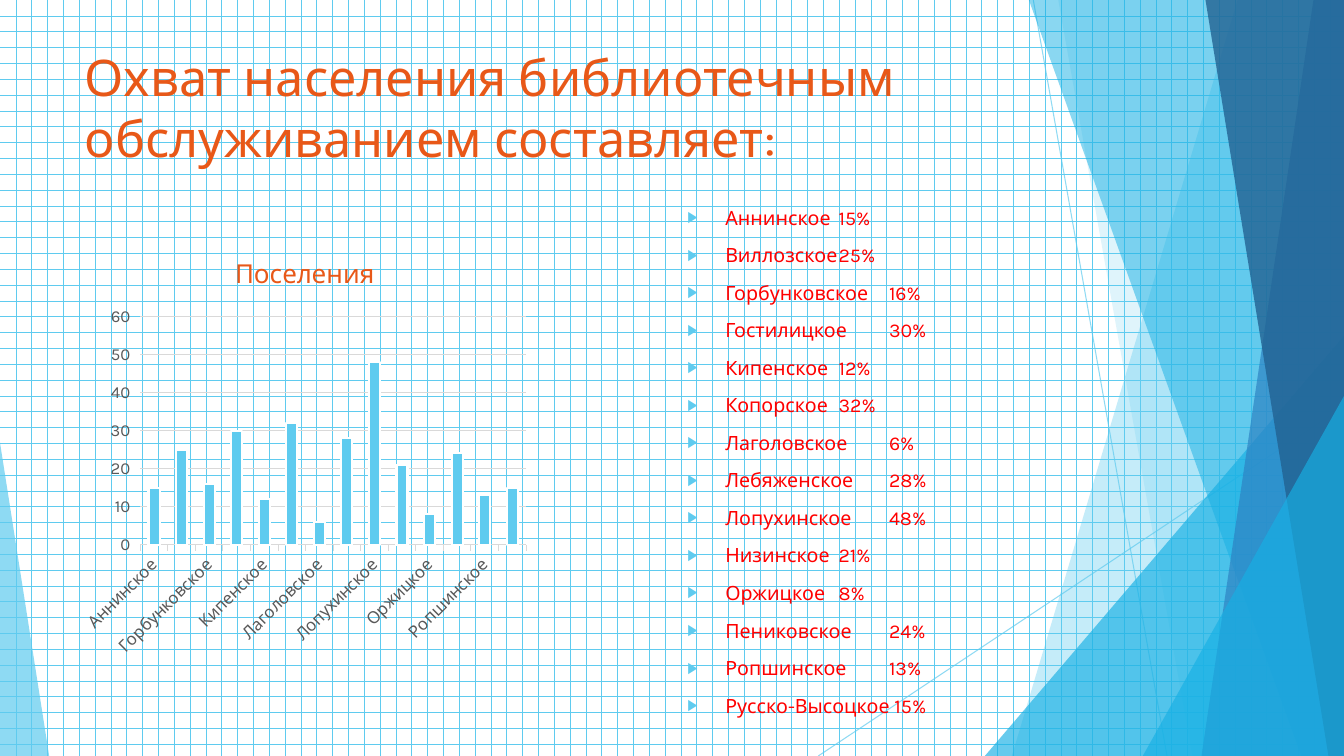
import pptx
import pptx.util
import pptx.chart.data
import pptx.dml.color
import pptx.enum.chart
import pptx.enum.dml
import pptx.enum.shapes
import pptx.enum.text
import pptx.oxml
import pptx.oxml.ns

Cm = pptx.util.Cm
Pt = pptx.util.Pt
qn = pptx.oxml.ns.qn
WIDE, HIGH = 33.87, 19.05
FACE = "Karla"
SKY, AZURE = "5FCBEF", "17B0E4"
ORANGE, RED, GREY, PALE = "E85818", "FF0000", "595959", "D9D9D9"
SHARES = {
    "Аннинское": 15, "Виллозское": 25, "Горбунковское": 16, "Гостилицкое": 30,
    "Кипенское": 12, "Копорское": 32, "Лаголовское": 6, "Лебяженское": 28,
    "Лопухинское": 48, "Низинское": 21, "Оржицкое": 8, "Пениковское": 24,
    "Ропшинское": 13, "Русско-Высоцкое": 15,
}


def tint(code):
    return pptx.dml.color.RGBColor.from_string(code)


def put(item, values):
    for name, value in values.items():
        setattr(item, name, value)


def style(font, size, code):
    put(font, {"size": Pt(size), "name": FACE, "bold": False})
    font.color.rgb = tint(code)


def stroke(line, code, width):
    line.color.rgb = tint(code)
    line.width = Pt(width)


def node(tag, **values):
    item = pptx.oxml.parse_xml(f"<{tag} {pptx.oxml.ns.nsdecls('a', 'c')}/>")
    for name, value in values.items():
        item.set(name, str(value))
    return item


def fade(shape, share):
    for color in shape.element.iter(qn("a:srgbClr")):
        color.append(node("a:alpha", val=share * 1000))


def paint(shape, code, share):
    shape.shadow.inherit = False
    shape.fill.solid()
    shape.fill.fore_color.rgb = tint(code)
    shape.line.fill.background()
    fade(shape, share)


def ray(slide, *ends):
    line = slide.shapes.add_connector(
        pptx.enum.shapes.MSO_CONNECTOR.STRAIGHT, *map(Cm, ends))
    stroke(line.line, SKY, 0.75)
    line.element.spPr.append(node("a:effectLst"))
    fade(line, 70)


def panel(slide, top, base, code, share):
    build = slide.shapes.build_freeform(Cm(top), 0)
    build.add_line_segments(
        [(Cm(x), Cm(y)) for x, y in ((WIDE, 0), (WIDE, HIGH), (base, HIGH))])
    paint(build.convert_to_shape(), code, share)


def wedge(slide, left, width, height, peak, code, share):
    shape = slide.shapes.add_shape(
        pptx.enum.shapes.MSO_SHAPE.ISOSCELES_TRIANGLE,
        Cm(left), Cm(HIGH - height), Cm(width), Cm(height))
    shape.adjustments[0] = peak
    paint(shape, code, share)


def scene(slide):
    fill = slide.background.fill
    fill.patterned()
    fill.pattern = pptx.enum.dml.MSO_PATTERN.DOTTED_GRID
    fill.fore_color.rgb = tint(SKY)
    fill.back_color.rgb = tint("FFFFFF")
    ray(slide, 26.04, 0, 29.41, HIGH)
    ray(slide, WIDE, 10.24, 20.62, HIGH)
    panel(slide, 31.19, 25.5, SKY, 36)
    panel(slide, 26.67, 30.05, SKY, 20)
    wedge(slide, 24.82, 9.05, 10.59, 1, AZURE, 66)
    panel(slide, 25.93, 32.79, AZURE, 50)
    panel(slide, 33.1, 30.28, "2E83C3", 70)
    panel(slide, 30.38, 33.48, "226292", 80)
    wedge(slide, 28.8, 5.07, 9.07, 1, AZURE, 66)
    wedge(slide, 0, 1.24, 7.9, 0, SKY, 70)


def write(slide, holder, box, lines, size, code, gap):
    slide.shapes.element.append(holder.element)
    put(holder, dict(zip(("left", "top", "width", "height"), map(Cm, box))))
    frame = holder.text_frame
    frame.text = "\n".join(lines)
    put(frame, {"word_wrap": True,
                "auto_size": pptx.enum.text.MSO_AUTO_SIZE.NONE,
                "vertical_anchor": pptx.enum.text.MSO_ANCHOR.TOP})
    for part in frame.paragraphs:
        put(part, {"alignment": pptx.enum.text.PP_ALIGN.LEFT,
                   "space_before": Pt(gap)})
        style(part.runs[0].font, size, code)
    return frame


def mark(part):
    props = part._p.get_or_add_pPr()
    put(props, {"marL": Cm(0.95), "indent": -Cm(0.95)})
    color = node("a:buClr")
    color.append(node("a:srgbClr", val=SKY))
    props.extend([color, node("a:buSzPct", val=80000),
                  node("a:buFont", typeface="Arial"),
                  node("a:buChar", char="▶")])


def clear(chart):
    for tag, join in (("c:chart", "addnext"), ("c:plotArea", "append")):
        plain = node("c:spPr")
        plain.append(node("a:noFill"))
        edge = node("a:ln")
        edge.append(node("a:noFill"))
        plain.append(edge)
        getattr(next(chart.element.iter(qn(tag))), join)(plain)


def graph(slide, title):
    data = pptx.chart.data.CategoryChartData()
    data.categories = list(SHARES)
    data.add_series(title, list(SHARES.values()))
    chart = slide.shapes.add_chart(
        pptx.enum.chart.XL_CHART_TYPE.COLUMN_CLUSTERED,
        Cm(1.88), Cm(5.99), Cm(11.61), Cm(10.77), data).chart
    put(chart, {"has_legend": False, "has_title": True})
    style(chart.font, 10, "000000")
    head = chart.chart_title.text_frame
    head.text = title
    style(head.paragraphs[0].runs[0].font, 18.6, ORANGE)
    for axis in (chart.category_axis, chart.value_axis):
        axis.major_tick_mark = pptx.enum.chart.XL_TICK_MARK.OUTSIDE
        style(axis.tick_labels.font, 12, GREY)
    stroke(chart.category_axis.format.line, PALE, 0.75)
    chart.value_axis.format.line.fill.background()
    stroke(chart.value_axis.major_gridlines.format.line, PALE, 0.75)
    plot = chart.plots[0]
    put(plot, {"gap_width": 150, "vary_by_categories": False})
    bars = plot.series[0].format
    bars.fill.solid()
    bars.fill.fore_color.rgb = tint(SKY)
    stroke(bars.line, "FFFFFF", 1.5)
    clear(chart)


def main():
    deck = pptx.Presentation()
    put(deck, {"slide_width": Cm(WIDE), "slide_height": Cm(HIGH)})
    slide = deck.slides.add_slide(deck.slide_layouts[1])
    title, body = slide.placeholders
    scene(slide)
    write(slide, title, (1.88, 1.04, 23.88, 3.66),
          ["Охват населения библиотечным обслуживанием составляет:"],
          36, ORANGE, 0)
    graph(slide, "Поселения")
    rows = [f"{name}{' ' if '-' in name else chr(9)}{share}%"
            for name, share in SHARES.items()]
    frame = write(slide, body, (17.07, 5.05, 8.69, 13.23), rows, 14, RED, 10)
    for part in frame.paragraphs:
        mark(part)
    deck.save("out.pptx")


if __name__ == "__main__":
    main()
